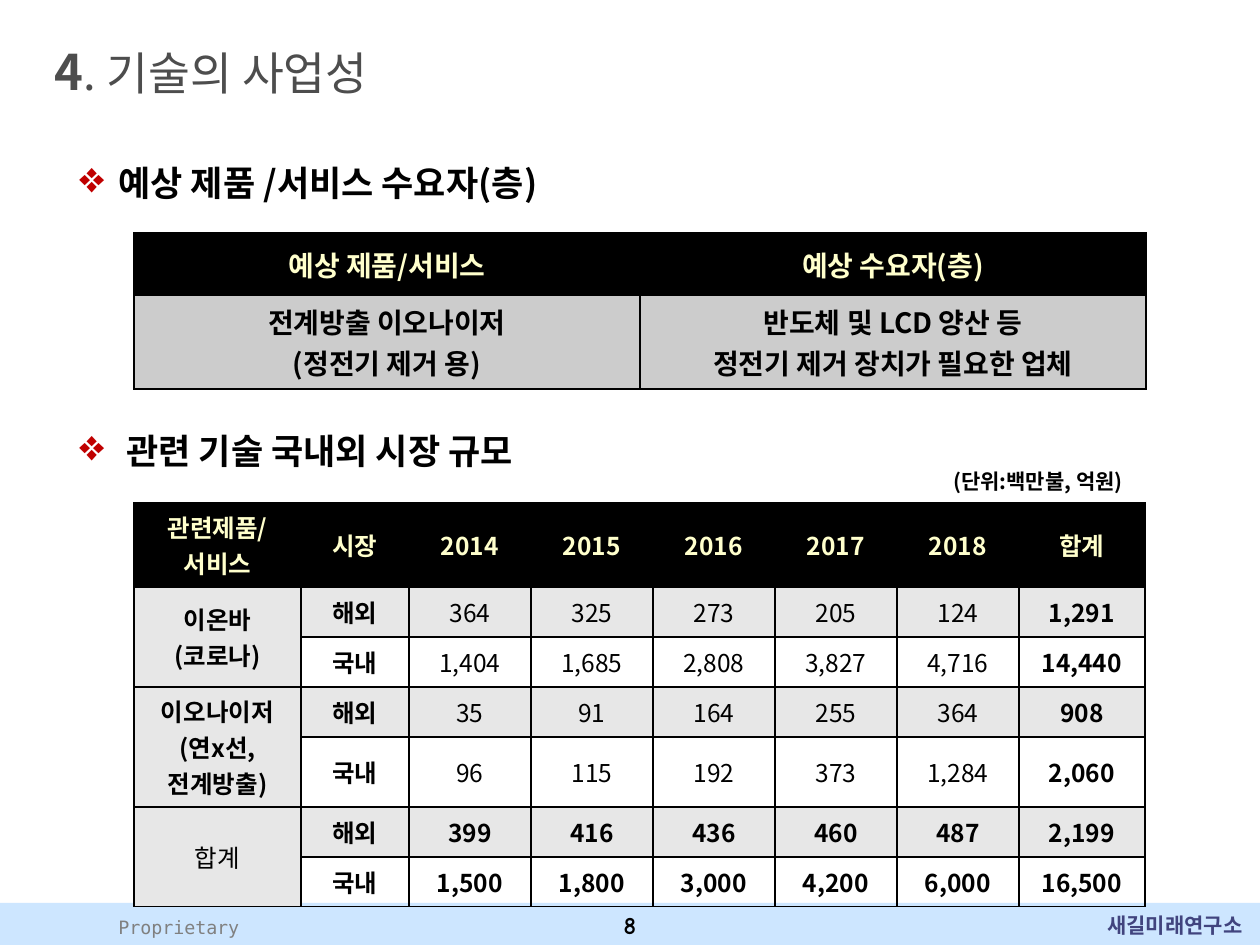
from pptx import Presentation
from pptx.dml.color import RGBColor
from pptx.enum.shapes import MSO_SHAPE
from pptx.enum.text import MSO_ANCHOR, PP_ALIGN
from pptx.oxml import parse_xml
from pptx.oxml.ns import nsdecls
from pptx.util import Emu, Pt

LEFT, CENTER, RIGHT = PP_ALIGN.LEFT, PP_ALIGN.CENTER, PP_ALIGN.RIGHT
TOP, MIDDLE = MSO_ANCHOR.TOP, MSO_ANCHOR.MIDDLE
RECTANGLE = MSO_SHAPE.RECTANGLE

KOREAN, MONO, COMIC = "Noto Sans CJK KR", "DejaVu Sans Mono", "Comic Neue"
COLORS = {
    "black": "000000", "title": "4D4D4D", "bullet": "C00000", "header": "FFFFCC",
    "silver": "CCCCCC", "pale": "E7E7E7", "footer": "CDE6FF", "grey": "808080",
    "institute": "41447E",
}

TITLE = [("4", 28, True), (". 기술의 사업성", 26, False)]
HEADINGS = [
    ("예상 제품 /서비스 수요자(층)", (64, 155, 586, 78)),
    (" 관련 기술 국내외 시장 규모", (64, 423, 527, 55)),
]
LABELS = [
    ("Proprietary", (106, 910, 168, 37), 10.5, MONO, "grey", False, LEFT, TOP),
    ("(단위:백만불, 억원)", (828, 462, 307, 38), 12, KOREAN, "black", True, RIGHT, TOP),
    ("8", (611, 903, 38, 43), 14, COMIC, "black", True, CENTER, MIDDLE),
    ("새길미래연구소", (1080, 906, 175, 38), 12, KOREAN, "institute", True, RIGHT, TOP),
]
CUSTOMERS = [
    ["예상 제품/서비스", "예상 수요자(층)"],
    ["전계방출 이오나이저\n(정전기 제거 용)", "반도체 및 LCD 양산 등\n정전기 제거 장치가 필요한 업체"],
]
MARKET_HEADER = ["관련제품/\n서비스", "시장", "2014", "2015", "2016", "2017", "2018", "합계"]
MARKETS = [
    ("이온바\n(코로나)",
     ["364", "325", "273", "205", "124", "1,291"],
     ["1,404", "1,685", "2,808", "3,827", "4,716", "14,440"]),
    ("이오나이저\n(연x선, 전계방출)",
     ["35", "91", "164", "255", "364", "908"],
     ["96", "115", "192", "373", "1,284", "2,060"]),
    ("합계",
     ["399", "416", "436", "460", "487", "2,199"],
     ["1,500", "1,800", "3,000", "4,200", "6,000", "16,500"]),
]
REGIONS = ["해외", "국내"]
TABLE_LEFT = 134


def px(length):
    return Emu(round(length * 914400 / 126))


def box(bounds):
    return [px(length) for length in bounds]


def rgb(name):
    return RGBColor.from_string(COLORS[name])


def set_font(font, size, color, bold, face=KOREAN):
    font.size, font.bold, font.name = Pt(size), bold, face
    font.color.rgb = rgb(color)
    font._rPr.append(parse_xml(f'<a:ea {nsdecls("a")} typeface="{face}"/>'))


def add_label(text, bounds, anchor=TOP):
    frame = slide.shapes.add_textbox(*box(bounds)).text_frame
    frame.word_wrap = True
    frame.vertical_anchor = anchor
    frame.text = text
    return frame.paragraphs[0]


def add_bullet(paragraph):
    properties = paragraph._p.get_or_add_pPr()
    properties.set("marL", str(px(42)))
    properties.set("indent", str(px(-39)))
    for tag in (f'<a:buClr {nsdecls("a")}><a:srgbClr val="{COLORS["bullet"]}"/></a:buClr>',
                f'<a:buSzPct {nsdecls("a")} val="125000"/>',
                f'<a:buChar {nsdecls("a")} char="❖"/>'):
        properties.append(parse_xml(tag))


def add_grid(top, widths, heights):
    table = slide.shapes.add_table(
        len(heights), len(widths),
        *box((TABLE_LEFT, top, sum(widths), sum(heights)))).table
    table.first_row = table.horz_banding = False
    for column, width in zip(table.columns, widths):
        column.width = px(width)
    for row, height in zip(table.rows, heights):
        row.height = px(height)
    return table


def fill_cell(cell, text, size, color, bold, fill):
    properties = cell._tc.get_or_add_tcPr()
    for side in ("lnL", "lnR", "lnT", "lnB"):
        properties.append(parse_xml(
            f'<a:{side} {nsdecls("a")} w="{Pt(1)}"><a:solidFill>'
            f'<a:srgbClr val="{COLORS["black"]}"/></a:solidFill></a:{side}>'))
    if fill:
        cell.fill.solid()
        cell.fill.fore_color.rgb = rgb(fill)
    else:
        cell.fill.background()
    cell.vertical_anchor = MIDDLE
    cell.text = text
    for paragraph in cell.text_frame.paragraphs:
        paragraph.alignment = CENTER
        set_font(paragraph.font, size, color, bold)


presentation = Presentation()
presentation.slide_width, presentation.slide_height = px(1260), px(945)
slide = presentation.slides.add_slide(presentation.slide_layouts[5])

footer = slide.shapes.add_shape(RECTANGLE, *box((0, 903, 1260, 42)))
footer.shadow.inherit = False
footer.fill.solid()
footer.fill.fore_color.rgb = rgb("footer")
footer.line.fill.background()

title = slide.shapes.title
title.left, title.top, title.width, title.height = box((42, 35, 987, 72))
title.text_frame.vertical_anchor = MIDDLE
title_line = title.text_frame.paragraphs[0]
title_line.alignment = LEFT
for text, size, bold in TITLE:
    run = title_line.add_run()
    run.text = text
    set_font(run.font, size, "title", bold)

for text, bounds in HEADINGS:
    heading = add_label(text, bounds)
    add_bullet(heading)
    set_font(heading.font, 20, "black", True)

customers = add_grid(233, [506, 506], [62, 94])
for r, row in enumerate(CUSTOMERS):
    color, fill = ("black", "silver") if r else ("header", "black")
    for c, text in enumerate(row):
        fill_cell(customers.cell(r, c), text, 16, color, True, fill)

markets = add_grid(503, [167, 108] + [122] * 5 + [126], [84, 50, 50, 50, 70, 50, 50])
for c, text in enumerate(MARKET_HEADER):
    fill_cell(markets.cell(0, c), text, 14, "header", True, "black")
last_column = len(MARKET_HEADER) - 1
for m, (product, *sales) in enumerate(MARKETS):
    is_total = m == len(MARKETS) - 1
    first = 1 + 2 * m
    markets.cell(first, 0).merge(markets.cell(first + 1, 0))
    for k, (region, amounts) in enumerate(zip(REGIONS, sales)):
        fill = None if k else "pale"
        fill_cell(markets.cell(first + k, 0), "" if k else product,
                  14, "black", not is_total, "pale")
        for c, text in enumerate([region] + amounts, 1):
            bold = is_total or c in (1, last_column)
            fill_cell(markets.cell(first + k, c), text, 14, "black", bold, fill)

for text, bounds, size, face, color, bold, alignment, anchor in LABELS:
    label = add_label(text, bounds, anchor)
    label.alignment = alignment
    set_font(label.font, size, color, bold, face)

presentation.save("out.pptx")
